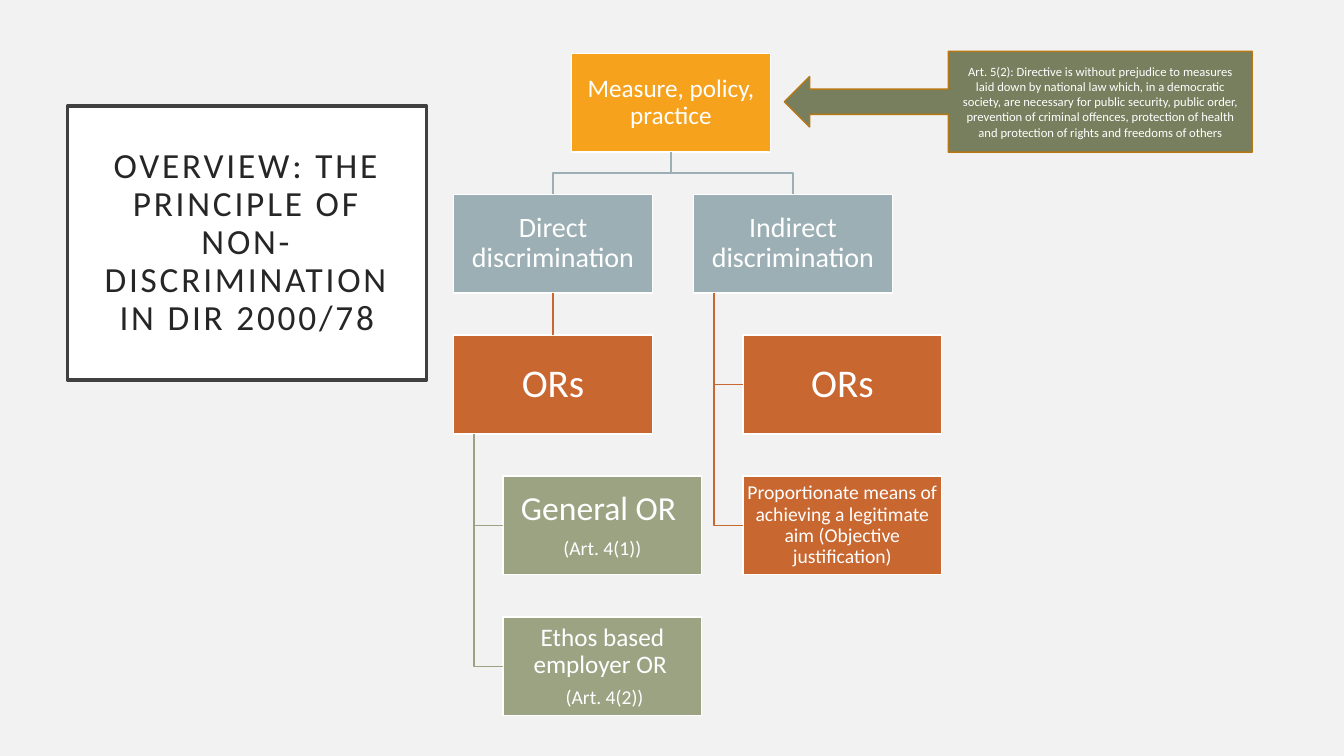
from dataclasses import dataclass

from lxml import etree
from pptx import Presentation
from pptx.dml.color import RGBColor
from pptx.enum.shapes import MSO_CONNECTOR as Connector, MSO_SHAPE as Preset
from pptx.enum.text import MSO_ANCHOR as Anchor, PP_ALIGN as Align
from pptx.oxml.ns import qn
from pptx.util import Inches, Pt


@dataclass(frozen=True)
class Theme:
    font: str = "Calibri"
    background: str = "F2F2F2"
    white: str = "FFFFFF"
    frame: str = "404040"
    title_text: str = "262626"
    amber: str = "F6A21D"
    blue_gray: str = "9BAFB5"
    orange: str = "C96731"
    sage: str = "9CA383"
    olive: str = "777F5E"
    callout_line: str = "B67815"
    title_size: float = 25.2
    huge: int = 28
    large: int = 24
    medium: int = 20
    body: int = 18
    small: int = 14
    note: int = 9


THEME = Theme()


def rgb(value):
    return RGBColor.from_string(value)


def add_box(slide, preset, box, fill, line, line_width=1.0):
    shape = slide.shapes.add_shape(preset, *(Inches(length) for length in box))
    shape.shadow.inherit = False
    shape.fill.solid()
    shape.fill.fore_color.rgb = rgb(fill)
    shape.line.color.rgb = rgb(line)
    shape.line.width = Pt(line_width)
    return shape


def set_insets(frame, inset):
    frame.margin_left = frame.margin_right = Inches(inset)
    frame.margin_top = frame.margin_bottom = Inches(inset)


def write(shape, paragraphs, color=THEME.white, line_spacing=0.9, space_after=0.35):
    """Each paragraph is a list of (text, size) runs."""
    frame = shape.text_frame
    frame.word_wrap = True
    frame.vertical_anchor = Anchor.MIDDLE
    for index, runs in enumerate(paragraphs):
        paragraph = frame.paragraphs[0] if index == 0 else frame.add_paragraph()
        paragraph.alignment = Align.CENTER
        paragraph.line_spacing = line_spacing
        paragraph.space_after = Pt(round(space_after * runs[0][1]))
        for text, size in runs:
            run = paragraph.add_run()
            run.text = text
            run.font.name = THEME.font
            run.font.size = Pt(size)
            run.font.color.rgb = rgb(color)


# Framed title on the left
def add_title(slide, box):
    shape = add_box(slide, Preset.RECTANGLE, box, THEME.white, THEME.frame, 2.5)
    set_insets(shape.text_frame, 0.2)
    text = "OVERVIEW: THE PRINCIPLE OF NON-DISCRIMINATION IN DIR 2000/78"
    write(shape, [[(text, THEME.title_size)]], THEME.title_text, space_after=0)
    run = shape.text_frame.paragraphs[0].runs[0]
    run.font._element.set("spc", "200")


# Bent line between two nodes
def add_elbow(slide, points, color):
    builder = slide.shapes.build_freeform(*points[0], scale=1.0)
    builder.add_line_segments(points[1:], close=False)
    shape = builder.convert_to_shape()
    shape.shadow.inherit = False
    shape.fill.background()
    shape.line.color.rgb = rgb(color)
    shape.line.width = Pt(1)


def add_branch(slide, parent, child, color):
    """From the parent's bottom centre to the child's top centre."""
    start_x = parent.left + parent.width // 2
    end_x = child.left + child.width // 2
    start_y = parent.top + parent.height
    middle_y = (start_y + child.top) // 2
    add_elbow(slide, [(start_x, start_y), (start_x, middle_y),
                      (end_x, middle_y), (end_x, child.top)], color)


def add_hanger(slide, parent, child, color):
    """From near the parent's lower left corner to the child's left side."""
    start_x = parent.left + Inches(0.2)
    end_y = child.top + child.height // 2
    add_elbow(slide, [(start_x, parent.top + parent.height),
                      (start_x, end_y), (child.left, end_y)], color)


def add_drop(slide, parent, child, color):
    """Straight line from the parent's bottom to the child's top."""
    connector = slide.shapes.add_connector(Connector.STRAIGHT, 0, 0, 0, 0)
    connector.begin_connect(parent, 2)
    connector.end_connect(child, 0)
    connector.line.color.rgb = rgb(color)
    connector.line.width = Pt(1)
    etree.SubElement(connector._element.spPr, qn("a:effectLst"))


# Discrimination tree
def add_tree(slide, box):
    left, top, width, height = box
    node_width, node_height, indent = 1.97, 0.98, 0.49
    row_step = (height - node_height) / 4
    second = width - node_width - indent
    t = THEME
    # name: (offset from left, row, fill, paragraphs)
    nodes = {
        "measure": (1.17, 0, t.amber, [[("Measure, policy, practice", t.body)]]),
        "direct": (0, 1, t.blue_gray, [[("Direct discrimination", t.medium)]]),
        "direct ORs": (0, 2, t.orange, [[("ORs", t.huge)]]),
        "general": (indent, 3, t.sage,
                    [[("General OR ", t.large)], [("(Art. 4(1))", t.small)]]),
        "ethos": (indent, 4, t.sage,
                  [[("Ethos based employer OR", t.body), (" ", t.small)],
                   [(" (Art. 4(2))", t.small)]]),
        "indirect": (second, 1, t.blue_gray, [[("Indirect discrimination", t.medium)]]),
        "indirect ORs": (second + indent, 2, t.orange, [[("ORs", t.huge)]]),
        "justification": (second + indent, 3, t.orange,
                          [[("Proportionate means of achieving a legitimate aim "
                             "(Objective justification)", t.small)]]),
    }
    shapes = {}
    for name, (offset, row, fill, paragraphs) in nodes.items():
        node_box = (left + offset, top + row * row_step, node_width, node_height)
        shape = add_box(slide, Preset.RECTANGLE, node_box, fill, t.white)
        set_insets(shape.text_frame, 0.01)
        write(shape, paragraphs)
        shapes[name] = shape

    links = [
        (add_branch, "measure", "direct", t.blue_gray),
        (add_branch, "measure", "indirect", t.blue_gray),
        (add_drop, "direct", "direct ORs", t.orange),
        (add_hanger, "direct ORs", "general", t.sage),
        (add_hanger, "direct ORs", "ethos", t.sage),
        (add_hanger, "indirect", "indirect ORs", t.orange),
        (add_hanger, "indirect", "justification", t.orange),
    ]
    for add_link, parent, child, color in links:
        add_link(slide, shapes[parent], shapes[child], color)


# Exception note pointing at the top node
def add_callout(slide, box):
    shape = add_box(slide, Preset.LEFT_ARROW_CALLOUT, box, THEME.olive, THEME.callout_line)
    text = ("Art. 5(2): Directive is without prejudice to measures laid down by "
            "national law which, in a democratic society, are necessary for public "
            "security, public order, prevention of criminal offences, protection of "
            "health and protection of rights and freedoms of others")
    write(shape, [[(text, THEME.note)]], line_spacing=1.0, space_after=0)


def main():
    presentation = Presentation()
    presentation.slide_width = Inches(13.33)
    presentation.slide_height = Inches(7.5)
    slide = presentation.slides.add_slide(presentation.slide_layouts[6])
    slide.background.fill.solid()
    slide.background.fill.fore_color.rgb = rgb(THEME.background)
    add_title(slide, (0.67, 1.05, 3.56, 2.72))
    add_tree(slide, (4.5, 0.53, 4.84, 6.57))
    add_callout(slide, (7.78, 0.51, 4.64, 1))
    presentation.save("out.pptx")


if __name__ == "__main__":
    main()
